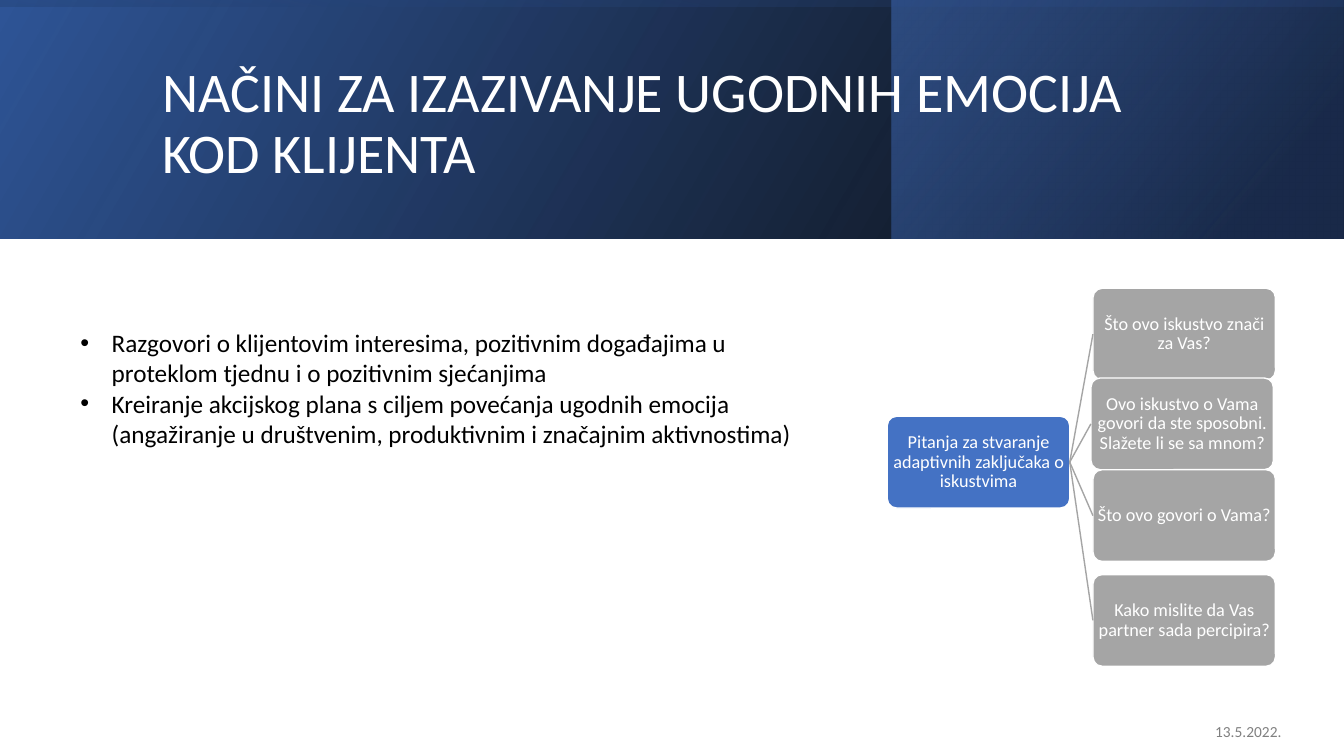
from lxml import etree
from pptx import Presentation
from pptx.dml.color import RGBColor
from pptx.enum.shapes import MSO_CONNECTOR, MSO_SHAPE
from pptx.enum.text import MSO_ANCHOR, MSO_AUTO_SIZE, PP_ALIGN
from pptx.oxml.ns import qn
from pptx.util import Pt

EMU_PER_PX = 9144
FONT = "Calibri"
TITLE_ONLY = 5
RIGHT_SIDE, LEFT_SIDE = 3, 1
RECTANGLE, ROUNDED = MSO_SHAPE.RECTANGLE, MSO_SHAPE.ROUNDED_RECTANGLE
STRAIGHT = MSO_CONNECTOR.STRAIGHT
MIDDLE = MSO_ANCHOR.MIDDLE
LEFT, CENTER, RIGHT = PP_ALIGN.LEFT, PP_ALIGN.CENTER, PP_ALIGN.RIGHT

WHITE = RGBColor(0xFF, 0xFF, 0xFF)
BLACK = RGBColor(0x00, 0x00, 0x00)
GRAY = RGBColor(0x80, 0x80, 0x80)
SILVER = RGBColor(0xA5, 0xA5, 0xA5)
BLUE = RGBColor(0x44, 0x72, 0xC4)
DARK_BLUE = RGBColor(0x2F, 0x55, 0x97)
NAVY = RGBColor(0x20, 0x38, 0x64)

# Position, rotation, gradient angle, stops of (position %, colour, opacity %)
HEADER_BANDS = [
    ((0, 0, 1333, 237), 0, 330, [(0, BLACK, 96), (100, DARK_BLUE, 100)]),
    ((884, 0, 448, 237), 0, 320, [(19, NAVY, 68), (100, BLUE, 48)]),
    ((548, -548, 237, 1333), 270, 350, [(23, DARK_BLUE, 16), (99, BLACK, 45)]),
]
BULLETS = [
    "Razgovori o klijentovim interesima, pozitivnim događajima u proteklom "
    "tjednu i o pozitivnim sjećanjima",
    "Kreiranje akcijskog plana s ciljem povećanja ugodnih emocija (angažiranje "
    "u društvenim, produktivnim i značajnim aktivnostima)",
]
TOPIC = "Pitanja za stvaranje adaptivnih zaključaka o iskustvima"
QUESTIONS = [
    (1084, 286, "Što ovo iskustvo znači za Vas?"),
    (1082, 375, "Ovo iskustvo o Vama govori da ste sposobni. Slažete li se sa mnom?"),
    (1084, 466, "Što ovo govori o Vama?"),
    (1084, 570, "Kako mislite da Vas partner sada percipira?"),
]


def px(*lengths):
    return [length * EMU_PER_PX for length in lengths]


def format_paragraph(paragraph, size, color, alignment=LEFT):
    paragraph.alignment = alignment
    paragraph.font.name = FONT
    paragraph.font.size = Pt(size)
    paragraph.font.color.rgb = color


def fill_gradient(shape, angle, stops):
    """Replace the fill with a linear gradient whose stops have opacity."""
    shape.fill.background()
    gradient = etree.Element(qn("a:gradFill"), rotWithShape="1")
    stop_list = etree.SubElement(gradient, qn("a:gsLst"))
    for position, color, opacity in stops:
        stop = etree.SubElement(stop_list, qn("a:gs"), pos=str(position * 1000))
        rgb = etree.SubElement(stop, qn("a:srgbClr"), val=str(color))
        etree.SubElement(rgb, qn("a:alpha"), val=str(opacity * 1000))
    etree.SubElement(gradient, qn("a:lin"), ang=str(angle * 60000), scaled="0")
    properties = shape.element.spPr
    properties.replace(properties.find(qn("a:noFill")), gradient)


def add_header_band(slide, box, rotation, angle, stops):
    """Add a mirrored gradient band behind the title."""
    band = slide.shapes.add_shape(RECTANGLE, *px(*box))
    band.shadow.inherit = False
    band.line.fill.background()
    band.rotation = rotation
    band.element.spPr.find(qn("a:xfrm")).set("flipH", "1")
    fill_gradient(band, angle, stops)
    slide.shapes.title.element.addprevious(band.element)


def set_title(slide, text):
    title = slide.shapes.title
    title.left, title.top, title.width, title.height = px(151, 38, 1063, 172)
    frame = title.text_frame
    frame.text = text
    frame.auto_size = MSO_AUTO_SIZE.NONE
    frame.vertical_anchor = MIDDLE
    paragraph = frame.paragraphs[0]
    format_paragraph(paragraph, 40, WHITE)
    paragraph.line_spacing = 0.9


def add_date(slide, text):
    frame = slide.shapes.add_textbox(*px(981, 706, 300, 40)).text_frame
    frame.word_wrap = True
    frame.vertical_anchor = MIDDLE
    frame.text = text
    paragraph = frame.paragraphs[0]
    format_paragraph(paragraph, 11, GRAY, RIGHT)
    paragraph.space_after = Pt(6)


def add_bullet_list(slide, items):
    frame = slide.shapes.add_textbox(*px(70, 320, 736, 162)).text_frame
    frame.word_wrap = True
    frame.auto_size = MSO_AUTO_SIZE.SHAPE_TO_FIT_TEXT
    frame.text = "\n".join(items)
    indent = 31 * EMU_PER_PX
    for paragraph in frame.paragraphs:
        format_paragraph(paragraph, 18, BLACK)
        properties = paragraph._p.get_or_add_pPr()
        properties.set("marL", str(indent))
        properties.set("indent", str(-indent))
        bullet_font = etree.Element(qn("a:buFont"), typeface="Arial")
        bullet = etree.Element(qn("a:buChar"), char="•")
        properties.find(qn("a:defRPr")).addprevious(bullet_font)
        bullet_font.addnext(bullet)


def add_node(slide, left, top, text, color):
    node = slide.shapes.add_shape(ROUNDED, *px(left, top, 181, 91))
    node.shadow.inherit = False
    node.adjustments[0] = 0.1
    node.fill.solid()
    node.fill.fore_color.rgb = color
    node.line.color.rgb = WHITE
    node.line.width = Pt(1)
    frame = node.text_frame
    frame.margin_left = frame.margin_right = EMU_PER_PX
    frame.margin_top = frame.margin_bottom = EMU_PER_PX
    frame.word_wrap = True
    frame.vertical_anchor = MIDDLE
    frame.text = text
    paragraph = frame.paragraphs[0]
    format_paragraph(paragraph, 13, WHITE, CENTER)
    paragraph.line_spacing = 0.9
    return node


def connect_nodes(slide, parent, child):
    connector = slide.shapes.add_connector(STRAIGHT, 0, 0, 0, 0)
    connector.begin_connect(parent, RIGHT_SIDE)
    connector.end_connect(child, LEFT_SIDE)
    connector.line.color.rgb = SILVER
    connector.line.width = Pt(1)
    etree.SubElement(connector.element.spPr, qn("a:effectLst"))


def main():
    presentation = Presentation()
    presentation.slide_width, presentation.slide_height = px(1333, 750)
    slide = presentation.slides.add_slide(presentation.slide_layouts[TITLE_ONLY])

    for band in HEADER_BANDS:
        add_header_band(slide, *band)
    set_title(slide, "NAČINI ZA IZAZIVANJE UGODNIH EMOCIJA KOD KLIJENTA")
    add_date(slide, "13.5.2022.")

    topic = add_node(slide, 880, 413, TOPIC, BLUE)
    for left, top, question in QUESTIONS:
        connect_nodes(slide, topic, add_node(slide, left, top, question, SILVER))
    add_bullet_list(slide, BULLETS)

    presentation.save("out.pptx")


if __name__ == "__main__":
    main()
